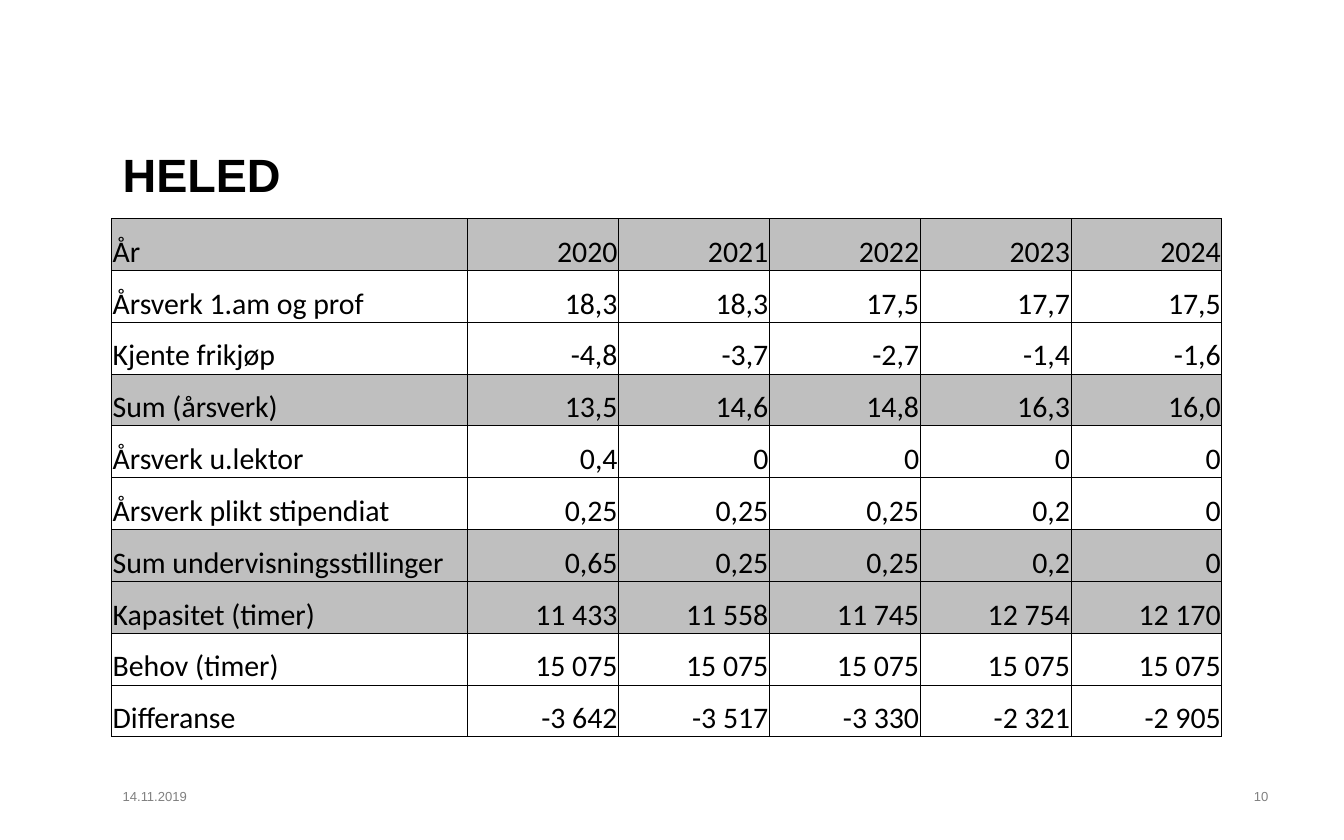
from dataclasses import dataclass

from lxml import etree
from pptx import Presentation
from pptx.dml.color import RGBColor
from pptx.enum.text import MSO_ANCHOR, PP_ALIGN
from pptx.oxml.ns import qn
from pptx.slide import Slide
from pptx.table import _Cell
from pptx.util import Cm, Pt

LEFT, RIGHT = PP_ALIGN.LEFT, PP_ALIGN.RIGHT
TOP, MIDDLE, BOTTOM = MSO_ANCHOR.TOP, MSO_ANCHOR.MIDDLE, MSO_ANCHOR.BOTTOM
BLACK = RGBColor(0x00, 0x00, 0x00)
GREY = RGBColor(0x80, 0x80, 0x80)
SILVER = RGBColor(0xBF, 0xBF, 0xBF)
EDGE = Pt(0.5)
MARGIN = Cm(2.11)
LABEL_WIDTH, YEAR_WIDTH, ROW_HEIGHT = Cm(6.73), Cm(2.85), Cm(0.98)


@dataclass
class Label:
    text: str
    left: int
    top: int
    width: int
    height: int
    size: int
    color: RGBColor
    bold: bool = False
    align: PP_ALIGN = LEFT
    anchor: MSO_ANCHOR = TOP


@dataclass
class Row:
    name: str
    values: list[str]
    shaded: bool = False


LABELS = [
    Label("HELED", MARGIN, Cm(1.96), Cm(22), Cm(2.64), 25, BLACK, True, anchor=MIDDLE),
    Label("14.11.2019", MARGIN, Cm(14.81), Cm(5.28), Cm(1.07), 7, GREY),
    Label("10", Cm(22.28), Cm(14.81), Cm(1.9), Cm(1.07), 7, GREY, align=RIGHT),
]

ROWS = [
    Row("År", ["2020", "2021", "2022", "2023", "2024"], True),
    Row("Årsverk 1.am og prof", ["18,3", "18,3", "17,5", "17,7", "17,5"]),
    Row("Kjente frikjøp", ["-4,8", "-3,7", "-2,7", "-1,4", "-1,6"]),
    Row("Sum (årsverk)", ["13,5", "14,6", "14,8", "16,3", "16,0"], True),
    Row("Årsverk u.lektor", ["0,4", "0", "0", "0", "0"]),
    Row("Årsverk plikt stipendiat", ["0,25", "0,25", "0,25", "0,2", "0"]),
    Row("Sum undervisningsstillinger", ["0,65", "0,25", "0,25", "0,2", "0"], True),
    Row("Kapasitet (timer)", ["11 433", "11 558", "11 745", "12 754", "12 170"], True),
    Row("Behov (timer)", ["15 075"] * 5),
    Row("Differanse", ["-3 642", "-3 517", "-3 330", "-2 321", "-2 905"]),
]


def add_label(slide: Slide, label: Label) -> None:
    box = slide.shapes.add_textbox(label.left, label.top, label.width, label.height)
    frame = box.text_frame
    frame.word_wrap = True
    frame.vertical_anchor = label.anchor
    frame.margin_left = frame.margin_right = Cm(0.21)
    frame.margin_top = frame.margin_bottom = Cm(0.1)
    para = frame.paragraphs[0]
    para.text = label.text
    para.alignment = label.align
    para.font.name = "Arial"
    para.font.size = Pt(label.size)
    para.font.bold = label.bold
    para.font.color.rgb = label.color


def add_edges(cell: _Cell) -> None:
    props = cell._tc.get_or_add_tcPr()
    for side in ("a:lnL", "a:lnR", "a:lnT", "a:lnB"):
        line = etree.SubElement(props, qn(side), w=str(EDGE))
        fill = etree.SubElement(line, qn("a:solidFill"))
        etree.SubElement(fill, qn("a:srgbClr"), val=str(BLACK))


def fill_cell(cell: _Cell, text: str, align: PP_ALIGN, shaded: bool) -> None:
    cell.margin_left = cell.margin_right = cell.margin_top = Cm(0.02)
    cell.margin_bottom = 0
    cell.vertical_anchor = BOTTOM
    add_edges(cell)
    if shaded:
        cell.fill.solid()
        cell.fill.fore_color.rgb = SILVER
    else:
        cell.fill.background()
    para = cell.text_frame.paragraphs[0]
    para.text = text
    para.alignment = align
    para.font.name = "Calibri"
    para.font.size = Pt(16)
    para.font.bold = False
    para.font.color.rgb = BLACK


def add_grid(slide: Slide, rows: list[Row]) -> None:
    years = len(rows[0].values)
    widths = [LABEL_WIDTH] + [YEAR_WIDTH] * years
    frame = slide.shapes.add_table(
        len(rows), len(widths), MARGIN, Cm(4.13), sum(widths), ROW_HEIGHT * len(rows)
    )
    table = frame.table
    table.first_row = table.horz_banding = False
    for column, width in zip(table.columns, widths):
        column.width = width
    for line, row in zip(table.rows, rows):
        line.height = ROW_HEIGHT
        aligns = [LEFT] + [RIGHT] * years
        for cell, text, align in zip(line.cells, [row.name, *row.values], aligns):
            fill_cell(cell, text, align, row.shaded)


def main() -> None:
    deck = Presentation()
    deck.slide_width, deck.slide_height = Cm(25.4), Cm(15.88)
    slide = deck.slides.add_slide(deck.slide_layouts[6])
    add_grid(slide, ROWS)
    for label in LABELS:
        add_label(slide, label)
    deck.save("out.pptx")


if __name__ == "__main__":
    main()
